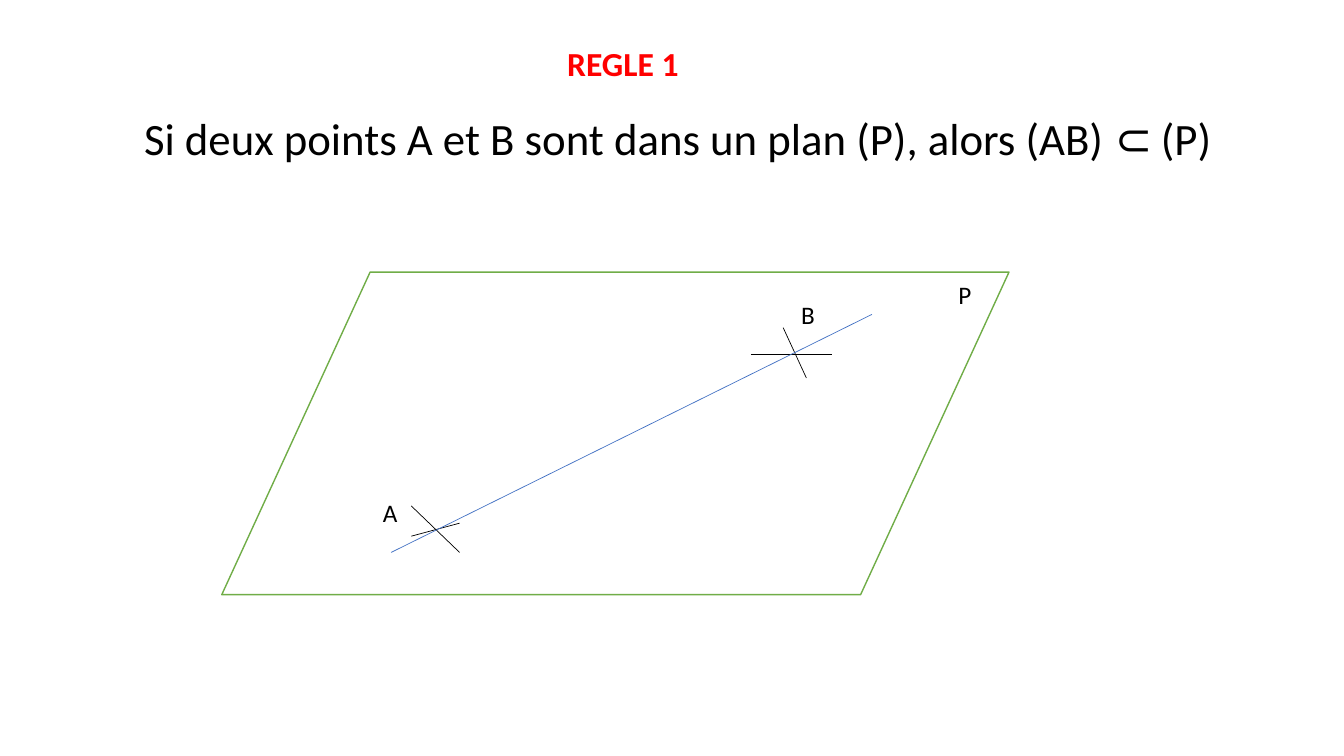
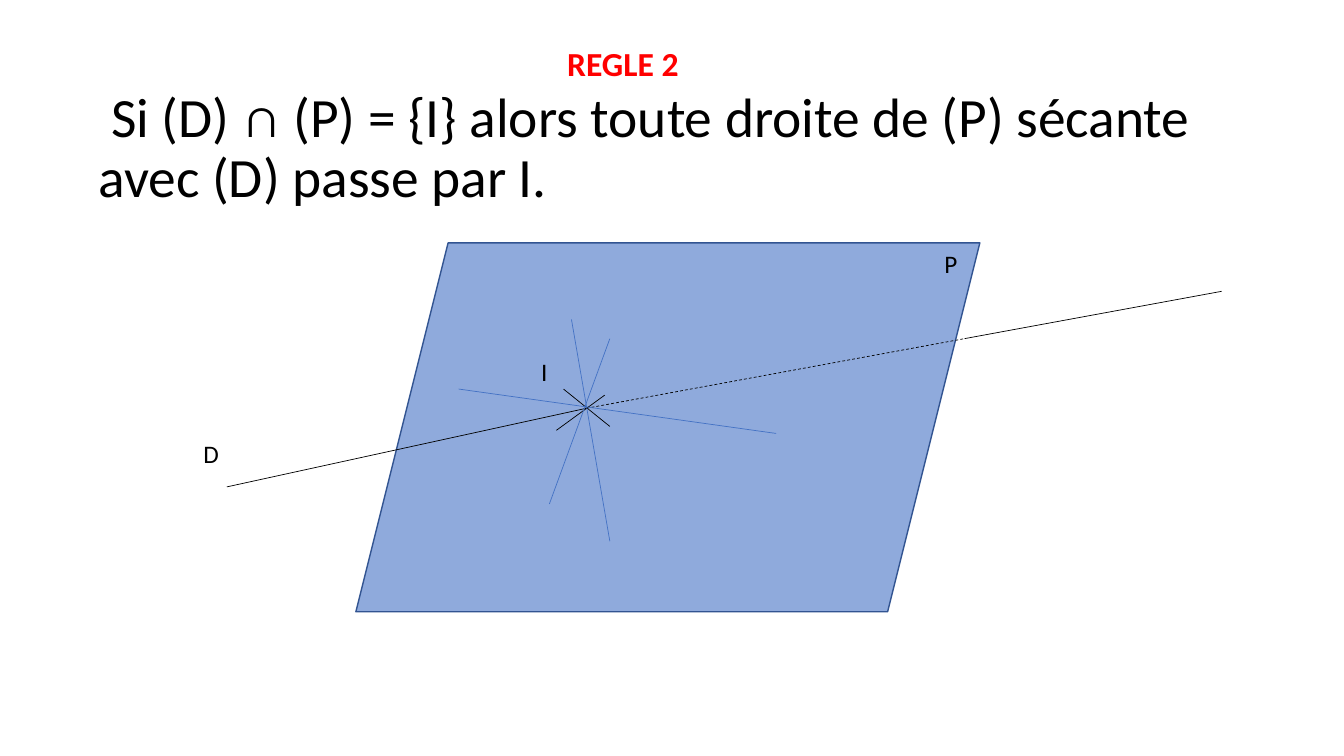
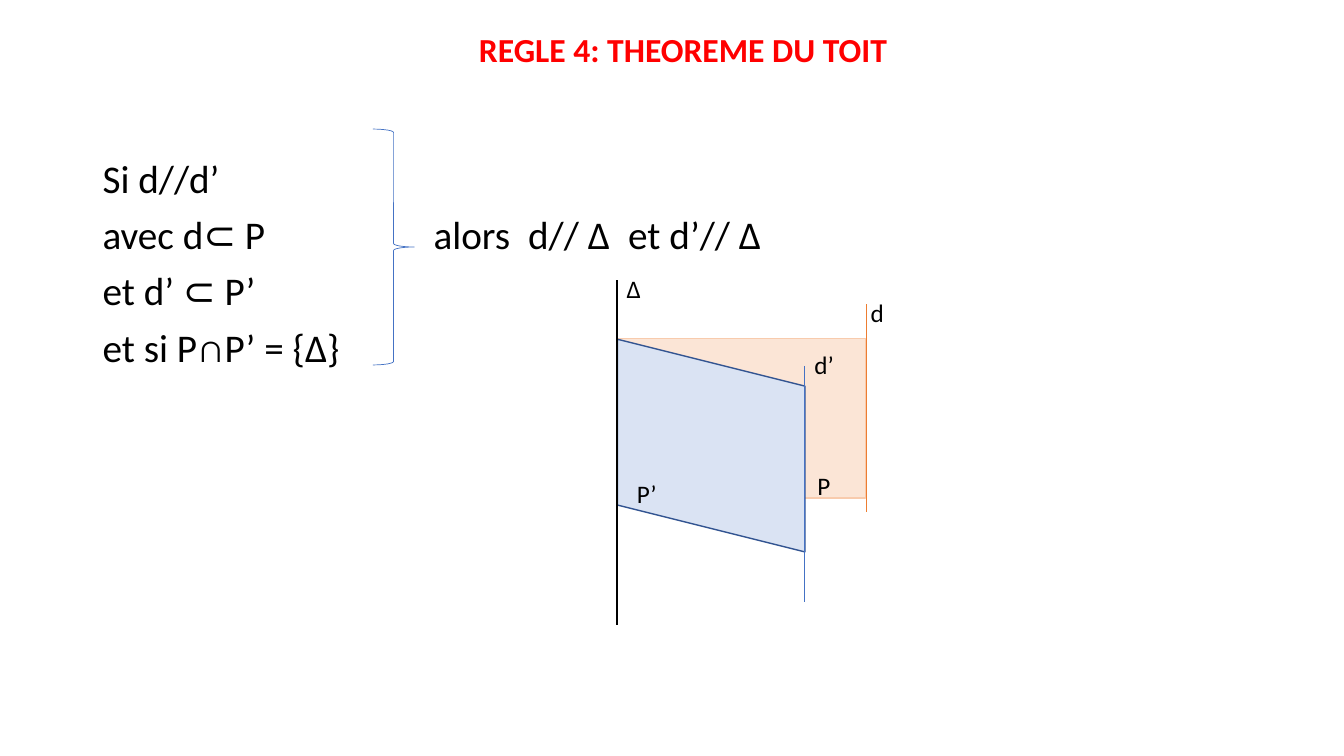
from dataclasses import dataclass

from lxml import etree
from pptx import Presentation
from pptx.dml.color import RGBColor
from pptx.enum.dml import MSO_LINE
from pptx.enum.shapes import MSO_CONNECTOR, MSO_SHAPE
from pptx.enum.text import MSO_ANCHOR, PP_ALIGN
from pptx.oxml.ns import qn
from pptx.util import Pt


@dataclass(frozen=True)
class Theme:
    font: str = "Calibri"
    # Colours
    ink: str = "000000"
    title: str = "FF0000"
    blue: str = "4472C4"
    navy: str = "325491"
    plane_blue: str = "8FAADC"
    pale_blue: str = "DAE3F3"
    green: str = "70AD47"
    orange: str = "ED7D31"
    peach: str = "F8CBAD"
    pale_peach: str = "FBE5D6"
    # Type sizes
    label_size: float = 18
    title_size: float = 24
    list_size: float = 28
    statement_size: float = 32
    headline_size: float = 39.6
    # Line widths
    thin: float = 0.5
    outline: float = 1


class RuleDeck:
    """Holds the style and the current slide; all lengths are in points."""

    def __init__(self, theme):
        self.theme = theme
        self.presentation = Presentation()
        self.presentation.slide_width = Pt(960)
        self.presentation.slide_height = Pt(540)
        self.slide = None

    def new_slide(self):
        self.slide = self.presentation.slides.add_slide(self.presentation.slide_layouts[6])

    def text(self, lines, box, size, color=None, bold=False, align=PP_ALIGN.LEFT,
             anchor=MSO_ANCHOR.TOP, spacing=1.0, before=0, indent=0, tabs=()):
        shape = self.slide.shapes.add_textbox(*map(Pt, box))
        frame = shape.text_frame
        frame.word_wrap = True
        frame.vertical_anchor = anchor
        frame.text = "\n".join(lines)
        for paragraph in frame.paragraphs:
            paragraph.alignment = align
            paragraph.line_spacing = spacing
            paragraph.space_before = Pt(before)
            properties = paragraph._p.get_or_add_pPr()
            if indent:
                properties.set("indent", str(Pt(indent)))
            if tabs:
                tab_list = etree.SubElement(properties, qn("a:tabLst"))
                for position in tabs:
                    etree.SubElement(tab_list, qn("a:tab"), pos=str(Pt(position)), algn="l")
            for run in paragraph.runs:
                run.font.name = self.theme.font
                run.font.size = Pt(size)
                run.font.bold = bold
                run.font.color.rgb = RGBColor.from_string(color or self.theme.ink)

    def title(self, text, box=(284.4, 27.4, 321.1, 36), **options):
        self.text([text], box, self.theme.title_size, self.theme.title, bold=True,
                  align=PP_ALIGN.CENTER, **options)

    def label(self, text, left, top, width):
        self.text([text], (left, top, width, 29), self.theme.label_size)

    def line(self, start, end, color=None, width=None, dashed=False):
        connector = self.slide.shapes.add_connector(
            MSO_CONNECTOR.STRAIGHT, *map(Pt, (*start, *end)))
        connector.line.color.rgb = RGBColor.from_string(color or self.theme.ink)
        connector.line.width = Pt(width or self.theme.thin)
        if dashed:
            connector.line.dash_style = MSO_LINE.DASH
        etree.SubElement(connector._element.spPr, qn("a:effectLst"))

    def shape(self, kind, box, outline, fill=None, width=None, slant=None, rotation=0):
        shape = self.slide.shapes.add_shape(kind, *map(Pt, box))
        shape.shadow.inherit = False
        shape.rotation = rotation
        if slant is not None:
            shape.adjustments[0] = slant
        if fill:
            shape.fill.solid()
            shape.fill.fore_color.rgb = RGBColor.from_string(fill)
        else:
            shape.fill.background()
        shape.line.color.rgb = RGBColor.from_string(outline)
        shape.line.width = Pt(width or self.theme.outline)


def line_in_plane(deck):
    theme = deck.theme
    deck.new_slide()
    deck.title("REGLE 1")
    deck.text(["Si deux points A et B sont dans un plan (P), alors (AB) ⊂ (P)"],
              (95.8, 75.6, 842.4, 67.7), theme.statement_size)
    # Crosses marking A and B
    for start, end in (
        ((293.8, 383), (328.3, 373.7)),
        ((293.8, 361.4), (328.3, 394.6)),
        ((536.4, 253.4), (594, 253.4)),
        ((559.4, 234), (576, 270)),
    ):
        deck.line(start, end)
    # Plane and line (AB)
    deck.shape(MSO_SHAPE.PARALLELOGRAM, (158.4, 194.4, 562.3, 230.4), theme.green, slant=0.46)
    deck.line((622.8, 224.6), (279.4, 394.6), theme.blue)
    deck.label("A", 266.4, 351.4, 34.6)
    deck.label("B", 565.2, 210.2, 57.6)
    deck.label("P", 677.5, 195.8, 65.5)


def line_through_plane(deck):
    theme = deck.theme
    deck.new_slide()
    deck.text(["Si (D) ∩ (P) = {I} alors toute droite de (P) sécante avec (D) passe par I."],
              (63.4, 54.7, 828, 104.4), theme.headline_size,
              anchor=MSO_ANCHOR.MIDDLE, spacing=0.9, indent=9)
    deck.shape(MSO_SHAPE.PARALLELOGRAM, (254.2, 173.5, 445.7, 263.5), theme.navy, theme.plane_blue)
    # Cross marking I
    deck.line((402.5, 277.9), (435.6, 304.6))
    deck.line((432, 282.2), (397.4, 307.4))
    # Line (D), dashed behind the plane
    crossing, plane_edge = (419, 291.6), (689, 241.9)
    deck.line((162, 347.8), crossing)
    deck.line(crossing, plane_edge, dashed=True)
    deck.line(plane_edge, (872.6, 208.1))
    # Lines of the plane through I
    for start, end in (
        ((327.6, 277.9), (554.4, 309.6)),
        ((435.6, 241.9), (392.4, 360)),
        ((408.2, 228.2), (435.6, 386.6)),
    ):
        deck.line(start, end, theme.blue)
    deck.label("I", 379.4, 250.6, 56.2)
    deck.label("D", 138.2, 309.6, 55.4)
    deck.label("P", 667.4, 173.5, 43.9)
    deck.title("REGLE 2")


def roof_theorem(deck):
    theme = deck.theme
    deck.new_slide()
    # Hypotheses and conclusion
    deck.text(["Si d//d’", "avec d⊂ P\talors\td// Δ\tet d’// Δ", "et d’ ⊂ P’", "et si P∩P’ = {Δ}"],
              (66.2, 110.2, 828, 375.8), theme.list_size,
              spacing=0.9, before=10, tabs=(236.5, 304, 375.5))
    deck.title("REGLE 4: THEOREME DU TOIT", (264, 20.2, 447.8, 33.1),
               anchor=MSO_ANCHOR.MIDDLE, spacing=0.9)
    deck.shape(MSO_SHAPE.RIGHT_BRACE, (266.4, 92.2, 29.5, 168.5), theme.blue, width=theme.thin)
    # Planes P and P’
    deck.shape(MSO_SHAPE.RECTANGLE, (440.6, 241.9, 177.8, 113.8), theme.peach, theme.pale_peach)
    deck.shape(MSO_SHAPE.PARALLELOGRAM, (432, 251.3, 151.9, 133.9), theme.navy,
               theme.pale_blue, rotation=270)
    # Parallel lines d, d’ and Δ
    for x, top, bottom, color, width in (
        (618.5, 217.4, 365.8, theme.orange, theme.thin),
        (574.6, 261.4, 429.8, theme.blue, theme.thin),
        (440.6, 200.2, 446.4, theme.ink, theme.outline),
    ):
        deck.line((x, top), (x, bottom), color, width)
    deck.label("P", 576.7, 332.6, 49)
    for name, left, top in (("P’", 447.8, 338.4), ("Δ", 440.6, 191.5),
                            ("d", 614.9, 208.8), ("d’", 574.6, 246.2)):
        deck.label(name, left, top, 76.3)


def main():
    deck = RuleDeck(Theme())
    line_in_plane(deck)
    line_through_plane(deck)
    roof_theorem(deck)
    deck.presentation.save("out.pptx")


if __name__ == "__main__":
    main()
